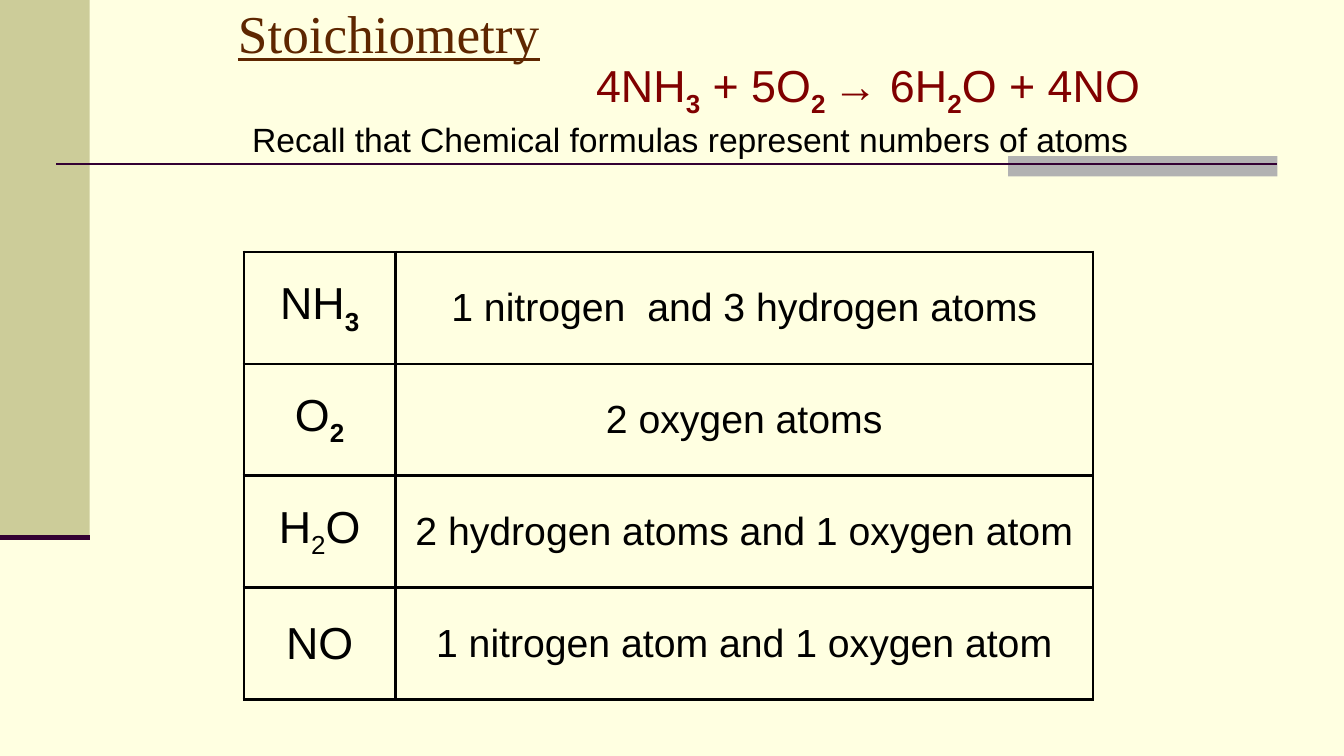
from dataclasses import dataclass

from lxml import etree
from pptx import Presentation
from pptx.dml.color import RGBColor
from pptx.enum.shapes import MSO_CONNECTOR, MSO_SHAPE
from pptx.enum.text import MSO_ANCHOR, PP_ALIGN
from pptx.oxml.ns import qn
from pptx.util import Inches, Pt

LINE = MSO_CONNECTOR.STRAIGHT
RECT = MSO_SHAPE.RECTANGLE
TOP, MIDDLE = MSO_ANCHOR.TOP, MSO_ANCHOR.MIDDLE
LEFT, CENTER = PP_ALIGN.LEFT, PP_ALIGN.CENTER
TITLE_ONLY = 5


@dataclass(frozen=True)
class Theme:
    paper: str = "FFFFE1"
    band: str = "CCCC99"
    tab: str = "B2B2B2"
    rule: str = "330033"
    title: str = "5E2600"
    accent: str = "800000"
    ink: str = "000000"
    serif: str = "Times New Roman"
    sans: str = "Arial"
    head: int = 38
    formula: int = 32
    cell: int = 28
    note: int = 24
    border: float = 2.25


def rgb(code):
    return RGBColor.from_string(code)


class Deck:
    def __init__(self, theme):
        self.theme = theme
        self.prs = Presentation()
        self.prs.slide_width = Inches(13.33)
        self.prs.slide_height = Inches(7.5)
        layout = self.prs.slide_layouts[TITLE_ONLY]
        self.slide = self.prs.slides.add_slide(layout)
        fill = self.slide.background.fill
        fill.solid()
        fill.fore_color.rgb = rgb(theme.paper)

    def block(self, box, color):
        shape = self.slide.shapes.add_shape(RECT, *map(Inches, box))
        shape.shadow.inherit = False
        shape.fill.solid()
        shape.fill.fore_color.rgb = rgb(color)
        shape.line.fill.background()

    def rule(self, left, right, y, width):
        line = self.slide.shapes.add_connector(
            LINE, Inches(left), Inches(y), Inches(right), Inches(y))
        line.line.color.rgb = rgb(self.theme.rule)
        line.line.width = Pt(width)
        etree.SubElement(line.element.spPr, qn("a:effectLst"))

    def runs(self, para, text, size, color, face=None, bold=True):
        """Fill a paragraph; parts between underscores become subscripts."""
        for i, part in enumerate(text.split("_")):
            if not part:
                continue
            run = para.add_run()
            run.text = part
            font = run.font
            font.name = face or self.theme.sans
            font.size = Pt(size)
            font.color.rgb = rgb(color)
            font.bold = False
            if i % 2:
                font.bold = bold
                run._r.get_or_add_rPr().set("baseline", "-25000")

    def frame(self, shape, box, inset, align):
        """Place a text shape and return its first paragraph."""
        shape.left, shape.top, shape.width, shape.height = map(Inches, box)
        frame = shape.text_frame
        frame.word_wrap = True
        frame.vertical_anchor = TOP
        frame.margin_top = Inches(inset)
        frame.margin_bottom = 0
        para = frame.paragraphs[0]
        para.alignment = align
        return para

    def title(self, text, box):
        shape = self.slide.shapes.title
        para = self.frame(shape, box, 0.05, LEFT)
        shape.text_frame.margin_left = Inches(0.02)
        shape.text_frame.margin_right = Inches(0.02)
        para.line_spacing = 0.95
        self.runs(para, text, self.theme.head, self.theme.title, self.theme.serif)
        para.runs[0].font.underline = True

    def text(self, text, box, size, color, inset=0.05):
        shape = self.slide.shapes.add_textbox(*map(Inches, box))
        para = self.frame(shape, box, inset, CENTER)
        self.runs(para, text, size, color)

    def edge(self, cell):
        """Draw all four borders of a cell."""
        props = cell._tc.get_or_add_tcPr()
        for i, side in enumerate(("lnL", "lnR", "lnT", "lnB")):
            line = etree.Element(qn(f"a:{side}"), w=str(Pt(self.theme.border)))
            fill = etree.SubElement(line, qn("a:solidFill"))
            etree.SubElement(fill, qn("a:srgbClr"), val=self.theme.ink)
            props.insert(i, line)

    def table(self, rows, box, widths):
        shape = self.slide.shapes.add_table(
            len(rows), len(widths), *map(Inches, box))
        table = shape.table
        table.first_row = table.horz_banding = False
        for col, width in zip(table.columns, widths):
            col.width = Inches(width)
        sizes = self.theme.formula, self.theme.cell
        for r, (*texts, bold) in enumerate(rows):
            table.rows[r].height = Inches(box[3] / len(rows))
            for c, text in enumerate(texts):
                cell = table.cell(r, c)
                cell.fill.background()
                cell.vertical_anchor = MIDDLE
                self.edge(cell)
                para = cell.text_frame.paragraphs[0]
                para.alignment = CENTER
                self.runs(para, text, sizes[c], self.theme.ink, bold=bold)


def main():
    theme = Theme()
    deck = Deck(theme)
    deck.block((0, 0, 0.89, 5.33), theme.band)
    deck.block((10, 1.55, 2.67, 0.2), theme.tab)
    deck.rule(0.56, 12.67, 1.63, 1.5)
    deck.rule(0, 0.89, 5.33, 3.5)
    deck.title("Stoichiometry", (2.34, 0, 9.33, 0.5))
    deck.text("Recall that Chemical formulas represent numbers of atoms",
              (2.02, 0.75, 9.65, 1.17), theme.note, theme.ink, inset=0.45)
    deck.text("4NH_3_ + 5O_2 _→ 6H_2_O + 4NO",
              (5.56, 0.52, 6.1, 0.58), theme.formula, theme.accent)
    # formula, atoms, bold subscript
    rows = [
        ("NH_3_", "1 nitrogen  and 3 hydrogen atoms", True),
        ("O_2_", "2 oxygen atoms", True),
        ("H_2_O", "2 hydrogen atoms and 1 oxygen atom", False),
        ("NO", "1 nitrogen atom and 1 oxygen atom", False),
    ]
    deck.table(rows, (2.42, 2.5, 8.42, 4.44), (1.5, 6.92))
    deck.prs.save("out.pptx")


if __name__ == "__main__":
    main()
